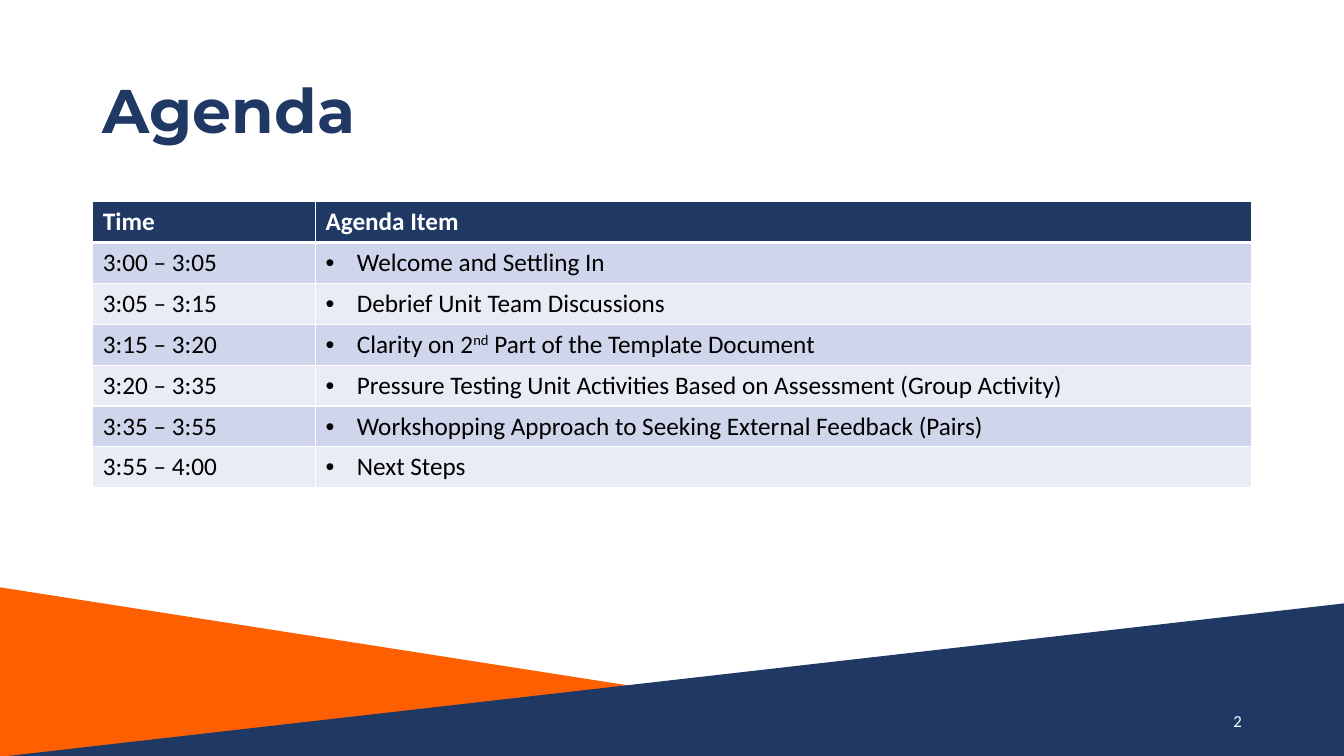
from dataclasses import dataclass

from lxml import etree
from pptx import Presentation
from pptx.dml.color import RGBColor
from pptx.enum.shapes import MSO_SHAPE
from pptx.enum.text import MSO_ANCHOR, PP_ALIGN
from pptx.oxml.ns import qn
from pptx.util import Cm, Pt

TRIANGLE = MSO_SHAPE.ISOSCELES_TRIANGLE
MIDDLE, TOP = MSO_ANCHOR.MIDDLE, MSO_ANCHOR.TOP
LEFT, RIGHT = PP_ALIGN.LEFT, PP_ALIGN.RIGHT

MARGIN, CONTENT_W = 2.34, 29.21
COLUMNS = (5.61, 23.6)
ROW_H = 1.03
AGENDA = [
    ("3:00 – 3:05", ["Welcome and Settling In"]),
    ("3:05 – 3:15", ["Debrief Unit Team Discussions"]),
    ("3:15 – 3:20", ["Clarity on 2", "nd", " Part of the Template Document"]),
    ("3:20 – 3:35", ["Pressure Testing Unit Activities Based on Assessment (Group Activity)"]),
    ("3:35 – 3:55", ["Workshopping Approach to Seeking External Feedback (Pairs)"]),
    ("3:55 – 4:00", ["Next Steps"]),
]


@dataclass(frozen=True)
class Theme:
    navy: str = "203864"
    orange: str = "FE5F00"
    white: str = "FFFFFF"
    black: str = "000000"
    bands: tuple = ("CFD5EA", "E9EBF5")
    heading: str = "Montserrat"
    body: str = "Calibri"
    title_size: int = 44
    table_size: int = 18
    number_size: int = 12


class AgendaSlide:
    def __init__(self, prs, theme):
        self.theme = theme
        self.s = prs.slides.add_slide(prs.slide_layouts[5])

    def style(self, p, size, color, bold=False, font=None):
        for r in p.runs:
            r.font.name = font or self.theme.body
            r.font.size = Pt(size)
            r.font.bold = bold
            r.font.color.rgb = RGBColor.from_string(color)

    def triangle(self, x, y, w, h, apex, color):
        sp = self.s.shapes.add_shape(TRIANGLE, Cm(x), Cm(y), Cm(w), Cm(h))
        sp.adjustments[0] = apex
        sp.shadow.inherit = False
        sp.fill.solid()
        sp.fill.fore_color.rgb = RGBColor.from_string(color)
        sp.line.fill.background()

    def title(self, text, x, y, w, h):
        sp = self.s.shapes.title
        sp.left, sp.top, sp.width, sp.height = Cm(x), Cm(y), Cm(w), Cm(h)
        tf = sp.text_frame
        tf.text = text
        tf.vertical_anchor = MIDDLE
        p = tf.paragraphs[0]
        p.alignment = LEFT
        p.line_spacing = 0.9
        self.style(p, self.theme.title_size, self.theme.navy, True, self.theme.heading)

    def number(self, text, x, y, w, h):
        tf = self.s.shapes.add_textbox(Cm(x), Cm(y), Cm(w), Cm(h)).text_frame
        tf.word_wrap = True
        tf.vertical_anchor = MIDDLE
        tf.text = text
        p = tf.paragraphs[0]
        p.alignment = RIGHT
        self.style(p, self.theme.number_size, self.theme.white)

    def borders(self, cell, top, bottom):
        tcPr = cell._tc.get_or_add_tcPr()
        for side, width in (("L", 1), ("R", 1), ("T", top), ("B", bottom)):
            ln = etree.SubElement(tcPr, qn(f"a:ln{side}"), w=str(Pt(width)))
            fill = etree.SubElement(ln, qn("a:solidFill"))
            etree.SubElement(fill, qn("a:srgbClr"), val=self.theme.white)

    def bullet(self, p):
        pPr = p._p.get_or_add_pPr()
        pPr.set("marL", str(Cm(0.79)))
        pPr.set("indent", str(-Cm(0.79)))
        etree.SubElement(pPr, qn("a:buFont"), typeface="Arial")
        etree.SubElement(pPr, qn("a:buChar"), char="•")

    def cell(self, cell, parts, row, bulleted=False):
        header = row == 0
        self.borders(cell, 3 if row == 1 else 1, 3 if header else 1)
        cell.fill.solid()
        fill = self.theme.navy if header else self.theme.bands[(row - 1) % 2]
        cell.fill.fore_color.rgb = RGBColor.from_string(fill)
        cell.vertical_anchor = TOP if header or bulleted else MIDDLE
        p = cell.text_frame.paragraphs[0]
        if bulleted:
            self.bullet(p)
        for i, part in enumerate(parts):
            r = p.add_run()
            r.text = part
            if i % 2:
                r.font._element.set("baseline", "30000")
        color = self.theme.white if header else self.theme.black
        self.style(p, self.theme.table_size, color, header)

    def table(self, header, rows, x, y):
        count = len(rows) + 1
        frame = self.s.shapes.add_table(
            count, len(COLUMNS), Cm(x), Cm(y), Cm(sum(COLUMNS)), Cm(ROW_H * count))
        table = frame.table
        for column, width in zip(table.columns, COLUMNS):
            column.width = Cm(width)
        for row in table.rows:
            row.height = Cm(ROW_H)
        for i, text in enumerate(header):
            self.cell(table.cell(0, i), [text], 0)
        for n, (time, item) in enumerate(rows, 1):
            self.cell(table.cell(n, 0), [time], n)
            self.cell(table.cell(n, 1), item, n, bulleted=True)


def main():
    prs = Presentation()
    prs.slide_width, prs.slide_height = Cm(33.87), Cm(19.05)
    theme = Theme()
    slide = AgendaSlide(prs, theme)
    slide.triangle(-0.13, 14.78, 27.36, 4.27, 0, theme.orange)
    slide.triangle(0.2, 15.19, 33.81, 3.86, 1, theme.navy)
    slide.title("Agenda", MARGIN, 1.02, CONTENT_W, 3.68)
    slide.table(("Time", "Agenda Item"), AGENDA, MARGIN, 5.08)
    slide.number("2", 23.93, 17.65, 7.62, 1.01)
    prs.save("out.pptx")


if __name__ == "__main__":
    main()
